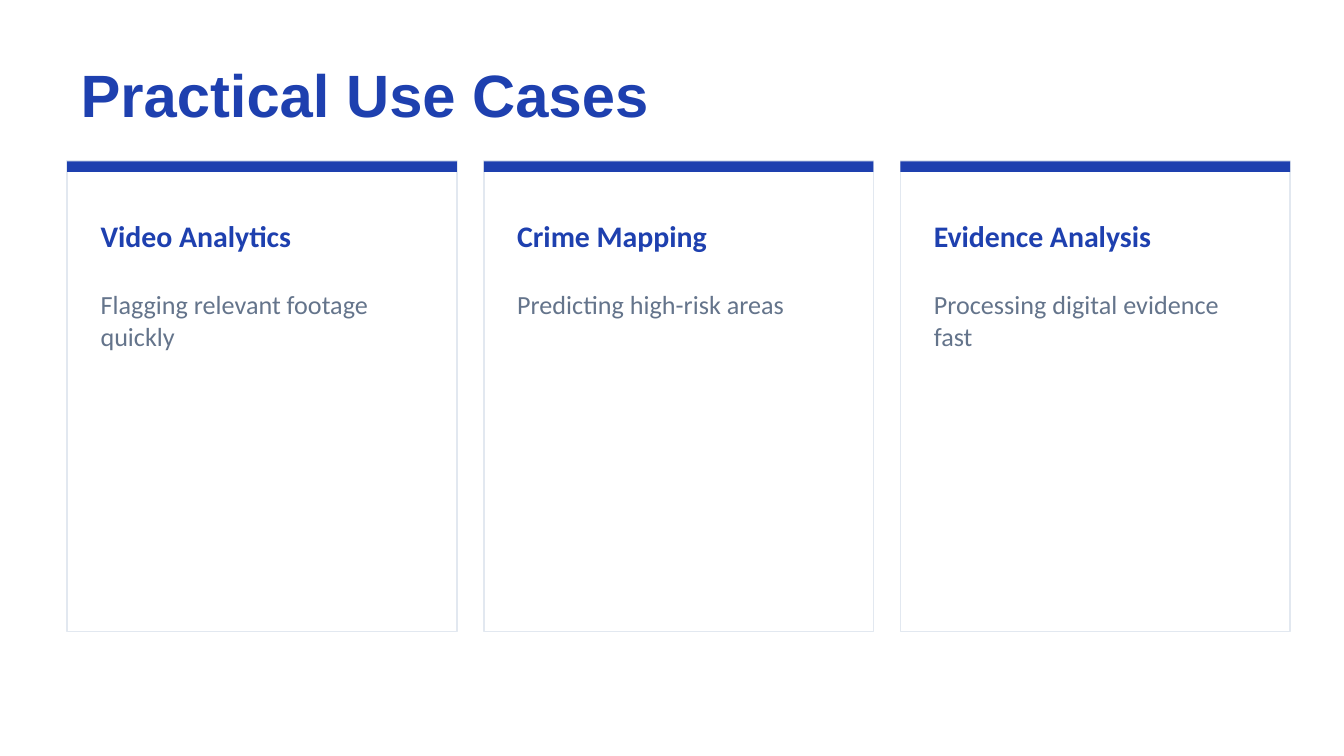
from dataclasses import dataclass

import pptx
import pptx.dml.color
import pptx.enum.shapes
import pptx.enum.text
import pptx.util
from pptx.util import Inches

ANCHOR = pptx.enum.text.MSO_ANCHOR
LEFT = pptx.enum.text.PP_ALIGN.LEFT


def rgb(value: str) -> pptx.dml.color.RGBColor:
    return pptx.dml.color.RGBColor.from_string(value)


@dataclass(frozen=True)
class TextStyle:
    name: str
    size: int
    color: str
    bold: bool
    anchor: ANCHOR


@dataclass(frozen=True)
class Theme:
    accent: str = "1E40AF"
    surface: str = "FFFFFF"
    border: str = "E2E8F0"
    title: TextStyle = TextStyle("Arial", 32, "1E40AF", True, ANCHOR.MIDDLE)
    heading: TextStyle = TextStyle("Calibri", 16, "1E40AF", True, ANCHOR.MIDDLE)
    body: TextStyle = TextStyle("Calibri", 14, "64748B", False, ANCHOR.TOP)


@dataclass(frozen=True)
class Box:
    left: float
    top: float
    width: float
    height: float

    def emu(self) -> list[pptx.util.Length]:
        return [Inches(v) for v in (self.left, self.top, self.width, self.height)]


@dataclass(frozen=True)
class UseCase:
    heading: str
    body: str


THEME = Theme()
SLIDE_WIDTH = Inches(10)
SLIDE_HEIGHT = SLIDE_WIDTH * 9 // 16
TITLE_BOX = Box(0.5, 0.4, 9, 0.6)
CARD = Box(0.5, 1.2, 2.9, 3.5)
CARD_GAP = 0.2
CARD_INSET = 0.15
BAR_HEIGHT = 0.08

USE_CASES = [
    UseCase("Video Analytics", "Flagging relevant footage quickly"),
    UseCase("Crime Mapping", "Predicting high-risk areas"),
    UseCase("Evidence Analysis", "Processing digital evidence fast"),
]


def write_text(sp, text: str, style: TextStyle) -> None:
    tf = sp.text_frame
    tf.word_wrap = True
    tf.auto_size = pptx.enum.text.MSO_AUTO_SIZE.NONE
    tf.vertical_anchor = style.anchor
    p = tf.paragraphs[0]
    p.alignment = LEFT
    r = p.add_run()
    r.text = text
    formats = {
        "name": style.name,
        "size": pptx.util.Pt(style.size),
        "bold": style.bold,
    }
    for key, value in formats.items():
        setattr(r.font, key, value)
    r.font.color.rgb = rgb(style.color)


def add_title(s, text: str) -> None:
    sp = s.shapes.title
    sp.left, sp.top, sp.width, sp.height = TITLE_BOX.emu()
    write_text(sp, text, THEME.title)


def add_rect(s, box: Box, fill: str, line: str | None = None) -> None:
    sp = s.shapes.add_shape(pptx.enum.shapes.MSO_SHAPE.RECTANGLE, *box.emu())
    sp.shadow.inherit = False
    sp.fill.solid()
    sp.fill.fore_color.rgb = rgb(fill)
    if line is None:
        sp.line.fill.background()
    else:
        sp.line.color.rgb = rgb(line)
        sp.line.width = pptx.util.Pt(1)


def add_label(s, box: Box, text: str, style: TextStyle) -> None:
    write_text(s.shapes.add_textbox(*box.emu()), text, style)


def add_card(s, left: float, case: UseCase) -> None:
    text_left = left + CARD_INSET
    text_width = CARD.width - 2 * CARD_INSET
    add_rect(s, Box(left, CARD.top, CARD.width, CARD.height),
             THEME.surface, THEME.border)
    add_rect(s, Box(left, CARD.top, CARD.width, BAR_HEIGHT), THEME.accent)
    add_label(s, Box(text_left, CARD.top + 0.3, text_width, 0.5),
              case.heading, THEME.heading)
    add_label(s, Box(text_left, CARD.top + 0.9, text_width, 2.4),
              case.body, THEME.body)


def main() -> None:
    prs = pptx.Presentation()
    prs.slide_width, prs.slide_height = SLIDE_WIDTH, SLIDE_HEIGHT
    s = prs.slides.add_slide(prs.slide_layouts.get_by_name("Title Only"))
    s.background.fill.solid()
    s.background.fill.fore_color.rgb = rgb(THEME.surface)
    add_title(s, "Practical Use Cases")
    for i, case in enumerate(USE_CASES):
        add_card(s, CARD.left + i * (CARD.width + CARD_GAP), case)
    prs.save("out.pptx")


if __name__ == "__main__":
    main()
